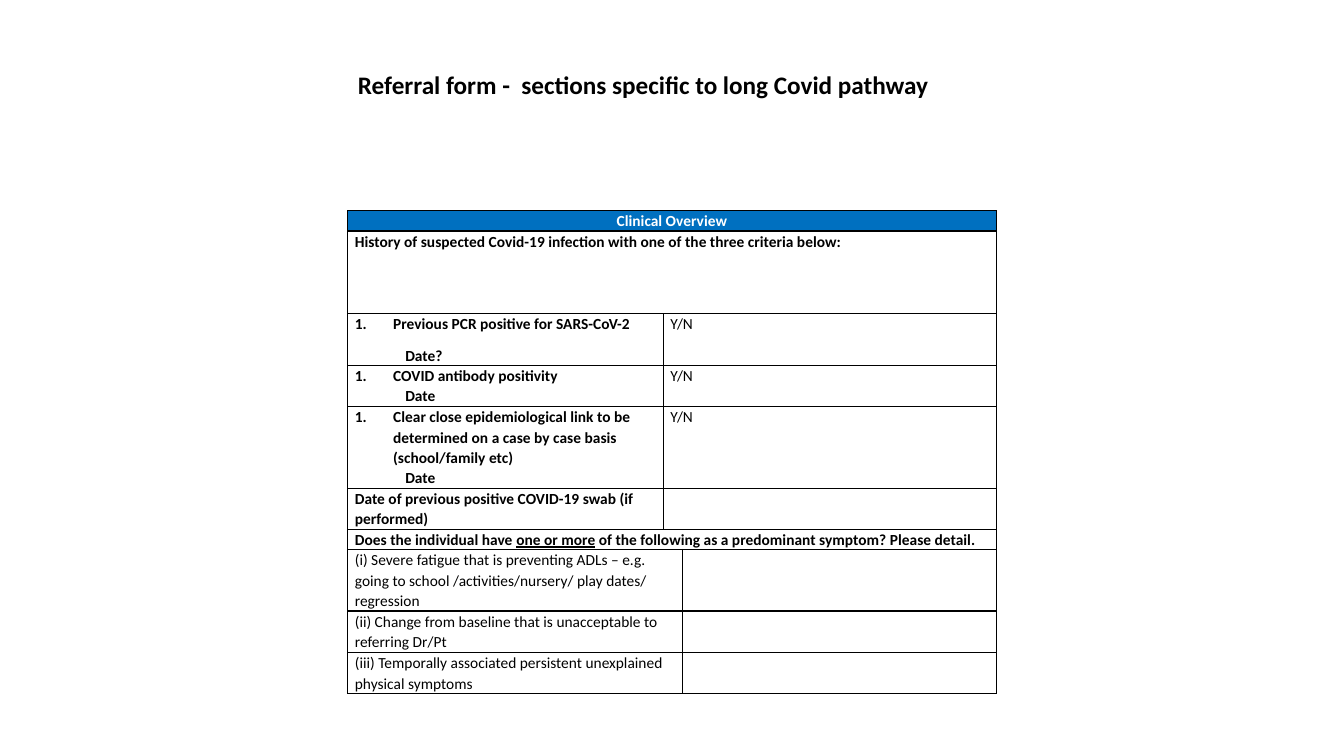
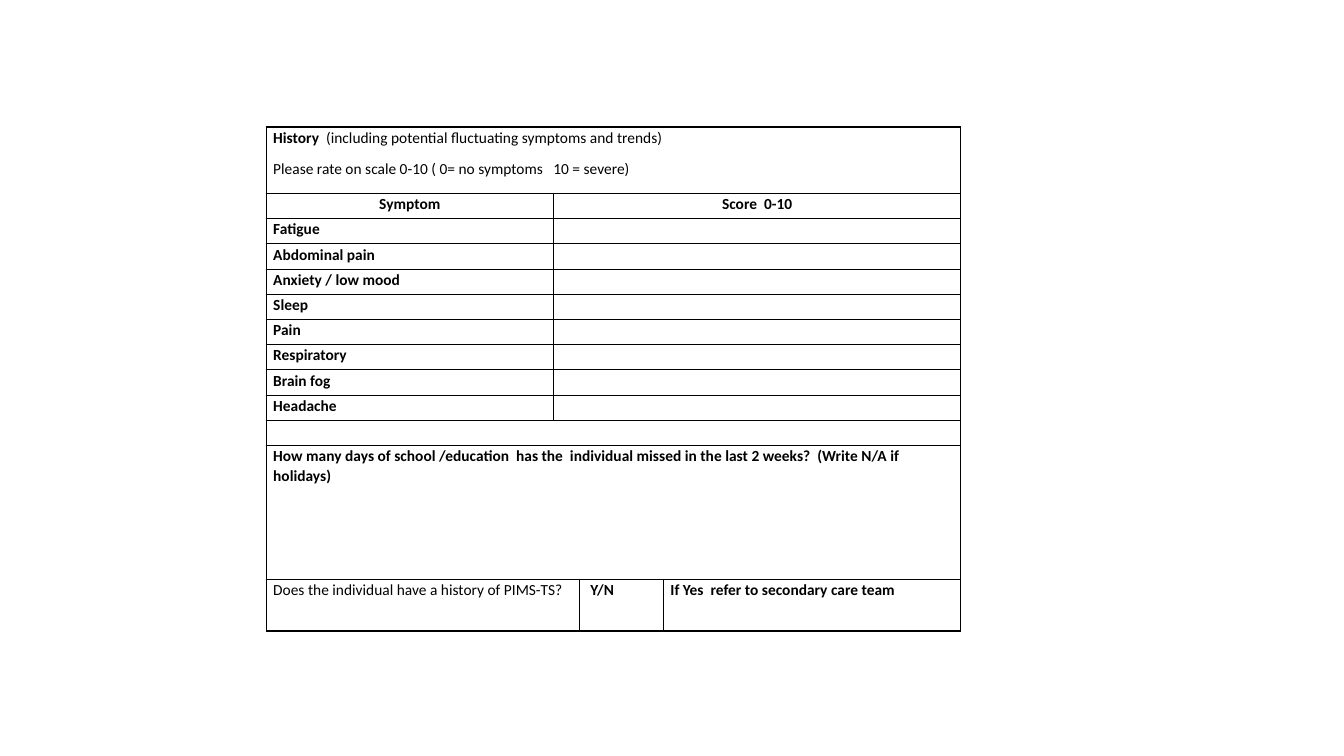
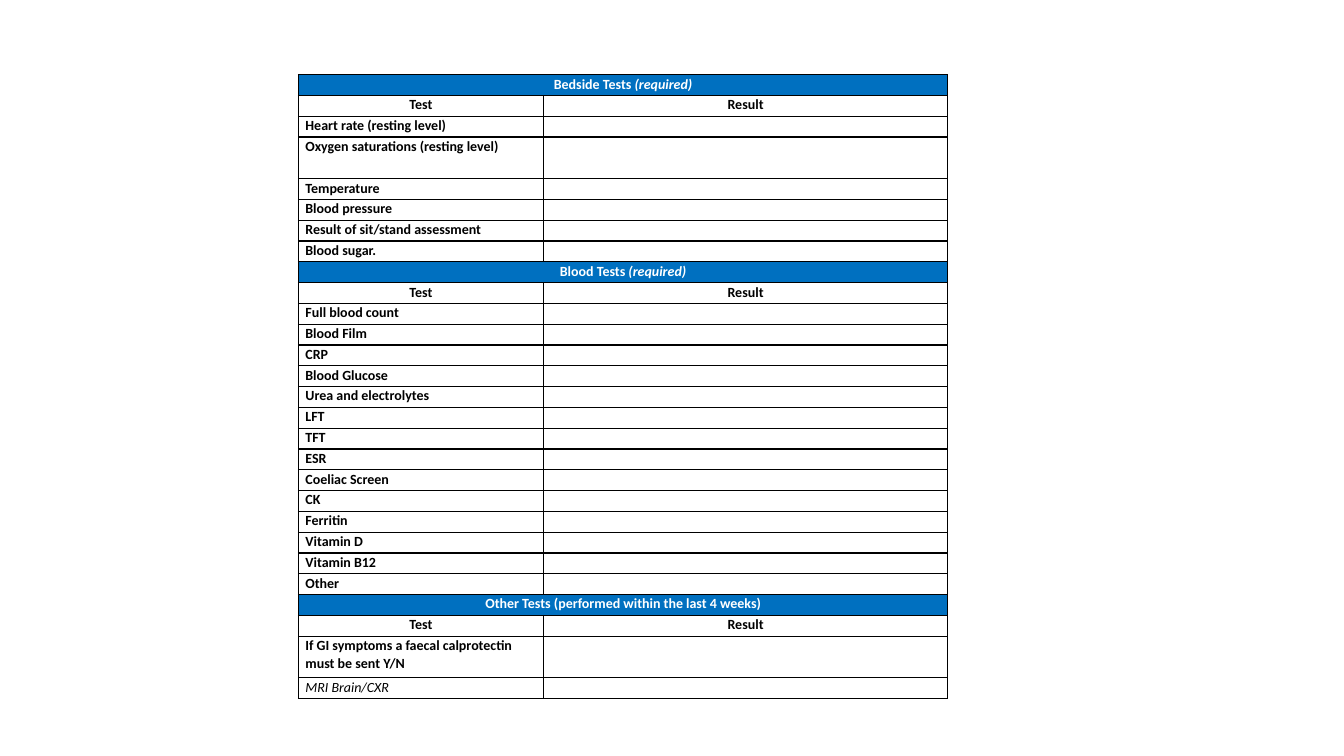
from dataclasses import dataclass

from lxml import etree
from pptx import Presentation
from pptx.dml.color import RGBColor
from pptx.enum.text import MSO_ANCHOR, PP_ALIGN
from pptx.oxml.ns import qn
from pptx.util import Inches, Pt

LEFT, CENTER = PP_ALIGN.LEFT, PP_ALIGN.CENTER
TOP, MIDDLE = MSO_ANCHOR.TOP, MSO_ANCHOR.MIDDLE
TITLE_ONLY, BLANK = 5, 6

# Shared look
FONT = "Calibri"
BLACK, WHITE, BLUE = "000000", "FFFFFF", "0070C0"
CELL_INSET = 0.07


@dataclass
class Para:
    runs: list  # (text, style letters: b bold, i italic, u underline)
    after: int = 8
    indent: float = 0
    numbered: bool = False


@dataclass
class Cell:
    paras: list
    span: int = 1
    align: int = LEFT
    anchor: int = TOP
    band: bool = False


def text(words, style="b", span=1, **look):
    return Cell([Para([(words, style)])], span, **look)


def band(span, *runs):
    return Cell([Para(list(runs))], span, CENTER, band=True)


def blank(span=1):
    return Cell([], span)


def criterion(words, date, after=0):
    return Cell([Para([(words, "b")], after, 0.38, True),
                 Para([(date, "b")], indent=0.5)])


# Content: rows as (height, cells)
TITLE = "Referral form -  sections specific to long Covid pathway"

OVERVIEW = [
    (0.2, [band(3, ("Clinical Overview", "b"))]),
    (0.82, [text("History of suspected Covid-19 infection with one of the three "
                 "criteria below:", span=3)]),
    (0.51, [criterion("Previous PCR positive for SARS-CoV-2", "Date?", 8),
            text("Y/N", "", 2)]),
    (0.41, [criterion("COVID antibody positivity", "Date"), text("Y/N", "", 2)]),
    (0.81, [criterion("Clear close epidemiological link to be determined on a case "
                      "by case basis (school/family etc)", "Date"),
            text("Y/N", "", 2)]),
    (0.4, [text("Date of previous positive COVID-19 swab (if performed)"), blank(2)]),
    (0.2, [Cell([Para([("Does the individual have ", "b"), ("one or more", "bu"),
                       (" of the following as a predominant symptom? Please detail.",
                        "b")])], 3)]),
]
PREDOMINANT = [
    (0.61, "(i) Severe fatigue that is preventing ADLs – e.g. going to school "
           "/activities/nursery/ play dates/ regression"),
    (0.41, "(ii) Change from baseline that is unacceptable to referring Dr/Pt"),
    (0.41, "(iii) Temporally associated persistent unexplained physical symptoms"),
]
OVERVIEW += [(h, [text(words, "", 2, anchor=MIDDLE), blank()])
             for h, words in PREDOMINANT]

SYMPTOMS = ["Fatigue", "Abdominal pain", "Anxiety / low mood", "Sleep", "Pain",
            "Respiratory", "Brain fog", "Headache"]
HISTORY = [
    (0.66, [Cell([
        Para([("History", "b"),
              ("  (including potential fluctuating symptoms and trends)", "")]),
        Para([("Please rate on scale 0-10 ( 0= no symptoms   10 = severe)", "")]),
    ], 4)]),
    (0.25, [text("Symptom", align=CENTER), text("Score  0-10", span=3, align=CENTER)]),
    *[(0.25, [text(symptom), blank(3)]) for symptom in SYMPTOMS],
    (0.25, [blank(4)]),
    (1.33, [text("How many days of school /education  has the  individual missed in "
                 "the last 2 weeks?  (Write N/A if holidays)", span=4)]),
    (0.51, [text("Does the individual have a history of PIMS-TS?", "", 2),
            text(" Y/N"), text("If Yes  refer to secondary care team")]),
]

TEST_SECTIONS = [
    ([("Bedside Tests ", "b"), ("(required)", "bi")],
     ["Heart rate (resting level)", "Oxygen saturations (resting level)",
      "Temperature", "Blood pressure", "Result of sit/stand assessment",
      "Blood sugar."]),
    ([("Blood Tests ", "b"), ("(required)", "bi")],
     ["Full blood count", "Blood Film", "CRP", "Blood Glucose",
      "Urea and electrolytes", "LFT", "TFT", "ESR", "Coeliac Screen", "CK",
      "Ferritin", "Vitamin D", "Vitamin B12", "Other"]),
    ([("Other Tests (performed within the last 4 weeks)", "b")],
     ["If GI symptoms a faecal calprotectin must be sent Y/N", "MRI Brain/CXR"]),
]
DOUBLE_ROWS = {"Oxygen saturations (resting level)",
               "If GI symptoms a faecal calprotectin must be sent Y/N"}
ITALIC_TESTS = {"MRI Brain/CXR"}
TEST_ROW = 6.2 / 30

TESTS = []
for heading, names in TEST_SECTIONS:
    TESTS += [(TEST_ROW, [band(2, *heading)]),
              (TEST_ROW, [text("Test", align=CENTER), text("Result", align=CENTER)])]
    TESTS += [(TEST_ROW * (2 if name in DOUBLE_ROWS else 1),
               [text(name, "i" if name in ITALIC_TESTS else "b"), blank()])
              for name in names]

# Slides: title, table left and top, column widths, text size, rows
SLIDES = [
    (TITLE, 3.45, 2.09, [3.13, 0.19, 3.11], 11, OVERVIEW),
    (None, 2.64, 1.26, [2.85, 0.26, 0.83, 2.95], 11, HISTORY),
    (None, 2.96, 0.74, [2.43, 4.01], 10, TESTS),
]


def rgb(color):
    return RGBColor.from_string(color)


def add_borders(cell):
    tc_pr = cell._tc.get_or_add_tcPr()
    for side in ("lnL", "lnR", "lnT", "lnB"):
        ln = etree.SubElement(tc_pr, qn("a:" + side), w=str(Pt(1)))
        fill = etree.SubElement(ln, qn("a:solidFill"))
        etree.SubElement(fill, qn("a:srgbClr"), val=BLACK)


def write_para(p, para, align, size, color):
    p.alignment = align
    p.line_spacing = 1.07
    p.space_after = Pt(para.after)
    p_pr = p._p.get_or_add_pPr()
    p_pr.set("marL", str(Inches(para.indent)))
    p_pr.set("indent", str(-Inches(para.indent) if para.numbered else 0))
    if para.numbered:
        etree.SubElement(p_pr, qn("a:buAutoNum"), type="arabicPeriod")
    p.font.size, p.font.name = Pt(size), FONT
    for words, style in para.runs:
        r = p.add_run()
        r.text = words
        r.font.bold, r.font.italic = "b" in style, "i" in style
        r.font.underline = "u" in style
        r.font.color.rgb = rgb(color)


def fill_cell(cell, content, size):
    cell.margin_left = cell.margin_right = Inches(CELL_INSET)
    cell.margin_top = cell.margin_bottom = 0
    cell.vertical_anchor = content.anchor
    if content.band:
        cell.fill.solid()
        cell.fill.fore_color.rgb = rgb(BLUE)
    tf = cell.text_frame
    for i, para in enumerate(content.paras):
        p = tf.add_paragraph() if i else tf.paragraphs[0]
        write_para(p, para, content.align, size, WHITE if content.band else BLACK)
    if not content.paras:
        # An empty cell keeps the table's text size, so its row stays low
        end = etree.SubElement(tf.paragraphs[0]._p, qn("a:endParaRPr"))
        end.set("sz", str(size * 100))


def add_form(slide, left, top, widths, size, rows):
    height = sum(h for h, _ in rows)
    table = slide.shapes.add_table(len(rows), len(widths), Inches(left), Inches(top),
                                   Inches(sum(widths)), Inches(height)).table
    table.first_row = table.horz_banding = False
    for column, width in zip(table.columns, widths):
        column.width = Inches(width)
    for cell in table.iter_cells():
        add_borders(cell)
        cell.fill.background()
    for i, (h, cells) in enumerate(rows):
        table.rows[i].height = Inches(h)
        col = 0
        for content in cells:
            cell = table.cell(i, col)
            col += content.span
            if content.span > 1:
                cell.merge(table.cell(i, col - 1))
            fill_cell(cell, content, size)


def set_title(slide, words):
    sp = slide.shapes.title
    sp.left, sp.top, sp.width, sp.height = map(Inches, (3.45, 0.64, 6.25, 0.4))
    sp.fill.solid()
    sp.fill.fore_color.rgb = rgb(WHITE)
    tf = sp.text_frame
    tf.word_wrap = True
    tf.vertical_anchor = MIDDLE
    p = tf.paragraphs[0]
    p.text = words
    p.alignment = LEFT
    p.font.size, p.font.name, p.font.bold = Pt(18), FONT, True
    p.font.color.rgb = rgb(BLACK)


def main():
    prs = Presentation()
    prs.slide_width, prs.slide_height = Inches(13.33), Inches(7.5)
    for title, *form in SLIDES:
        layout = prs.slide_layouts[TITLE_ONLY if title else BLANK]
        slide = prs.slides.add_slide(layout)
        if title:
            set_title(slide, title)
        add_form(slide, *form)
    prs.save("out.pptx")


if __name__ == "__main__":
    main()
